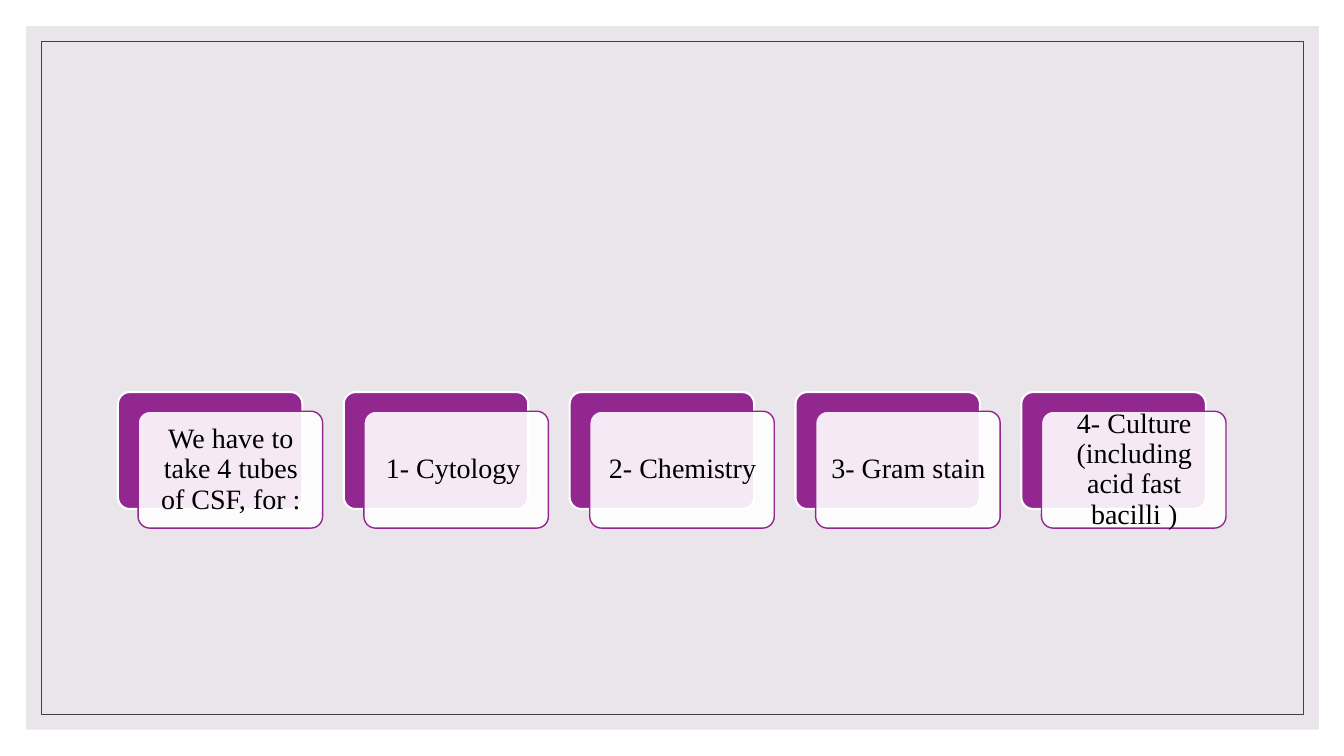
from dataclasses import dataclass
from typing import Optional

from lxml.etree import SubElement
from pptx import Presentation
from pptx.dml.color import RGBColor
from pptx.enum.shapes import MSO_SHAPE as Preset
from pptx.enum.text import MSO_ANCHOR as Anchor, PP_ALIGN as Align
from pptx.oxml.ns import qn
from pptx.shapes.autoshape import Shape
from pptx.shapes.shapetree import GroupShapes
from pptx.util import Pt

PX = 9144
COLOURS = {
    "panel": "EAE5EB",
    "frame": "404040",
    "purple": "92278F",
    "white": "FFFFFF",
    "black": "000000",
}
STEPS = [
    "We have to take 4 tubes of CSF, for :",
    "1- Cytology ",
    "2- Chemistry",
    "3- Gram stain",
    "4- Culture (including acid fast bacilli )",
]
STEP_LEFT, STEP_TOP, STEP_PITCH = 117, 389, 224


@dataclass(frozen=True)
class Block:
    left: int
    top: int
    width: int
    height: int
    fill: Optional[str] = None
    line: Optional[str] = None
    weight: float = 1
    rounded: bool = False
    opacity: int = 100


PANEL = Block(26, 26, 1282, 698, fill="panel")
FRAME = Block(41, 41, 1252, 668, line="frame", weight=0.5)
BACK_CARD = Block(0, 0, 183, 116, "purple", "white", 1.5, rounded=True)
FRONT_CARD = Block(20, 19, 183, 116, "white", "purple", 1, rounded=True, opacity=90)
LABEL = Block(24, 22, 176, 110)


def colour(name: str) -> RGBColor:
    return RGBColor.from_string(COLOURS[name])


def place(block: Block, left: int, top: int) -> list[int]:
    return [length * PX for length in
            (left + block.left, top + block.top, block.width, block.height)]


def draw_block(shapes: GroupShapes, block: Block, left: int = 0, top: int = 0) -> Shape:
    preset = Preset.ROUNDED_RECTANGLE if block.rounded else Preset.RECTANGLE
    box = shapes.add_shape(preset, *place(block, left, top))
    box.shadow.inherit = False
    if block.rounded:
        box.adjustments[0] = 0.1
    if block.fill:
        box.fill.solid()
        box.fill.fore_color.rgb = colour(block.fill)
    else:
        box.fill.background()
    if block.line:
        box.line.color.rgb = colour(block.line)
        box.line.width = Pt(block.weight)
    else:
        box.line.fill.background()
    if block.opacity < 100:
        tint = box.fill._xPr.find(qn("a:solidFill"))[0]
        SubElement(tint, qn("a:alpha")).set("val", str(block.opacity * 1000))
    return box


def draw_label(shapes: GroupShapes, text: str, left: int, top: int) -> None:
    frame = shapes.add_textbox(*place(LABEL, left, top)).text_frame
    inset = 8 * PX
    layout = {
        "word_wrap": True,
        "vertical_anchor": Anchor.MIDDLE,
        "margin_left": inset,
        "margin_top": inset,
        "margin_right": inset,
        "margin_bottom": inset,
    }
    for name, value in layout.items():
        setattr(frame, name, value)
    para = frame.paragraphs[0]
    para.alignment = Align.CENTER
    para.line_spacing = 0.9
    span = para.add_run()
    span.text = text
    for name, value in {"name": "Times New Roman", "size": Pt(20)}.items():
        setattr(span.font, name, value)
    span.font.color.rgb = colour("black")


def main() -> None:
    deck = Presentation()
    deck.slide_width, deck.slide_height = 1333 * PX, 750 * PX
    page = deck.slides.add_slide(deck.slide_layouts[6])
    for block in (PANEL, FRAME):
        draw_block(page.shapes, block)
    steps = page.shapes.add_group_shape().shapes
    for index, text in enumerate(STEPS):
        left = STEP_LEFT + index * STEP_PITCH
        for card in (BACK_CARD, FRONT_CARD):
            draw_block(steps, card, left, STEP_TOP)
        draw_label(steps, text, left, STEP_TOP)
    deck.save("out.pptx")


if __name__ == "__main__":
    main()
